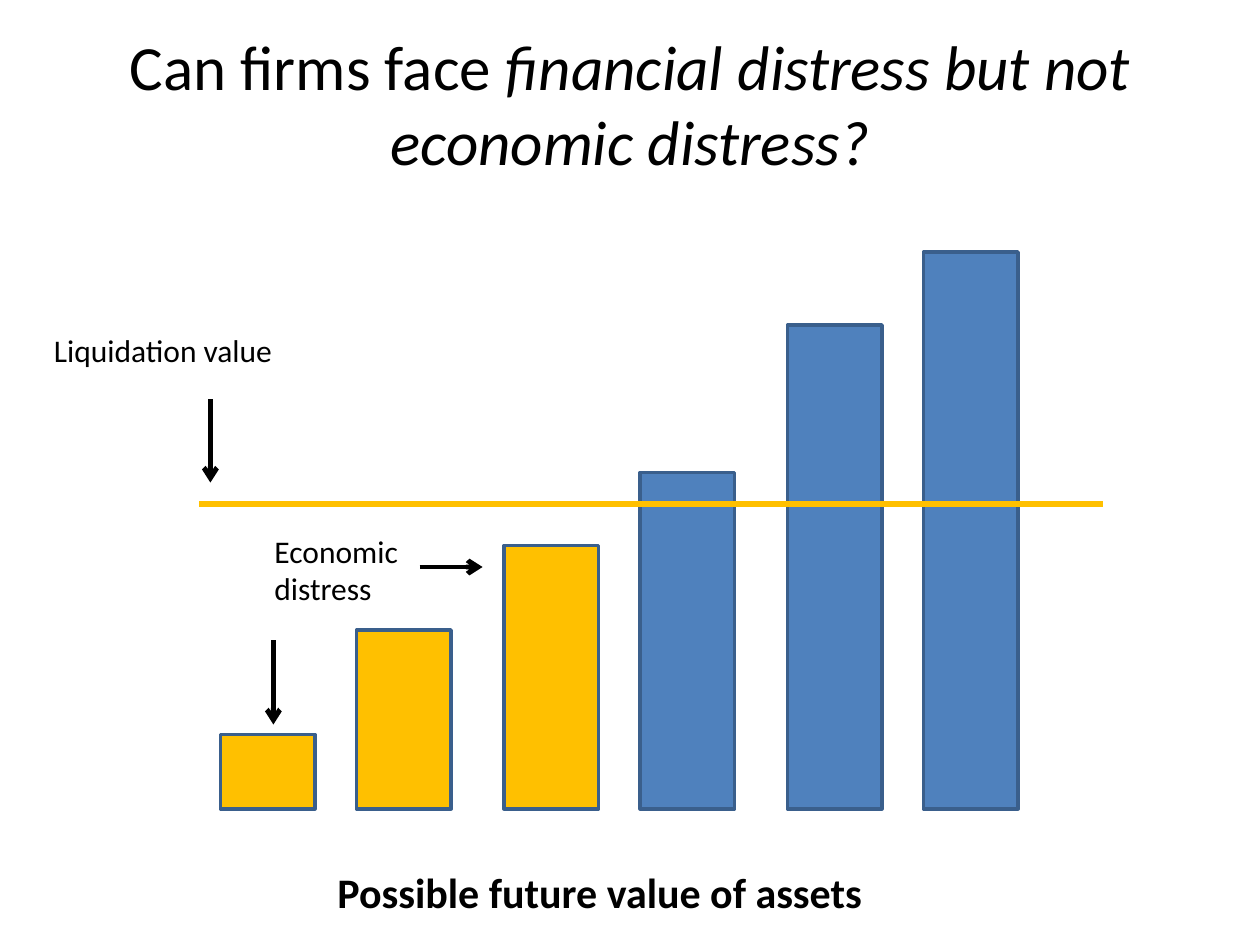
from lxml.etree import SubElement
from pptx import Presentation
from pptx.dml.color import RGBColor
from pptx.enum.shapes import MSO_CONNECTOR, MSO_SHAPE
from pptx.enum.text import MSO_ANCHOR, PP_ALIGN
from pptx.oxml.ns import qn
from pptx.util import Inches, Pt

COLORS = {"text": "000000", "distress": "FFC000", "healthy": "4F81BD",
          "outline": "3A5F8C", "liquidation": "FFC000"}
FONT = "Calibri"
BASELINE = 6.42
BAR_WIDTH = 0.75
LIQUIDATION_Y = 4


class SlideBuilder:
    def __init__(self, slide):
        self.slide = slide

    def color(self, name):
        return RGBColor.from_string(COLORS[name])

    def text(self, box, text, size=18, bold=False):
        tb = self.slide.shapes.add_textbox(*map(Inches, box))
        tf = tb.text_frame
        tf.word_wrap = True
        p = tf.paragraphs[0]
        p.text = text
        for r in p.runs:
            self.style(r, size, bold=bold)

    def title(self, box, plain, emphasis):
        """Centred title whose second part is italic."""
        tb = self.slide.shapes.add_textbox(*map(Inches, box))
        tf = tb.text_frame
        tf.word_wrap = True
        tf.vertical_anchor = MSO_ANCHOR.MIDDLE
        p = tf.paragraphs[0]
        p.alignment = PP_ALIGN.CENTER
        for text, italic in ((plain, False), (emphasis, True)):
            r = p.add_run()
            r.text = text
            self.style(r, 36, italic=italic)

    def style(self, r, size, bold=False, italic=False):
        r.font.name = FONT
        r.font.size = Pt(size)
        r.font.bold = bold
        r.font.italic = italic
        r.font.color.rgb = self.color("text")

    def bar(self, left, top, fill):
        """Bar standing on the common baseline."""
        sp = self.slide.shapes.add_shape(
            MSO_SHAPE.RECTANGLE, Inches(left), Inches(top),
            Inches(BAR_WIDTH), Inches(BASELINE - top))
        sp.shadow.inherit = False
        sp.fill.solid()
        sp.fill.fore_color.rgb = self.color(fill)
        sp.line.color.rgb = self.color("outline")
        sp.line.width = Pt(2)

    def line(self, start, end, color, width):
        cxn = self.slide.shapes.add_connector(
            MSO_CONNECTOR.STRAIGHT, *map(Inches, start + end))
        cxn.line.color.rgb = self.color(color)
        cxn.line.width = Pt(width)
        SubElement(cxn._element.spPr, qn("a:effectLst"))
        return cxn

    def arrow(self, start, end):
        cxn = self.line(start, end, "text", 2.75)
        SubElement(cxn.line._get_or_add_ln(), qn("a:tailEnd"), type="arrow")


def main():
    prs = Presentation()
    prs.slide_width, prs.slide_height = Inches(10), Inches(7.5)
    s = SlideBuilder(prs.slides.add_slide(prs.slide_layouts[6]))

    s.title((0.5, 0.3, 9, 1.03), "Can firms face ",
            "financial distress but not economic distress?")

    bars = [(1.75, 5.83), (2.83, 5), (4, 4.33),
            (5.08, 3.75), (6.25, 2.58), (7.33, 2)]
    for left, top in bars:
        s.bar(left, top, "distress" if top > LIQUIDATION_Y else "healthy")

    s.text((2.58, 6.83, 5.5, 0.5), "Possible future value of assets", 24, bold=True)

    s.text((2.08, 4.17, 1.25, 0.71), "Economic\vdistress")
    s.arrow((2.17, 5.08), (2.17, 5.75))
    s.arrow((3.33, 4.5), (3.83, 4.5))

    s.line((1.58, LIQUIDATION_Y), (8.75, LIQUIDATION_Y), "liquidation", 3)
    s.text((0.33, 2.58, 2, 0.4), "Liquidation value")
    s.arrow((1.67, 3.17), (1.67, 3.83))

    prs.save("out.pptx")


if __name__ == "__main__":
    main()
